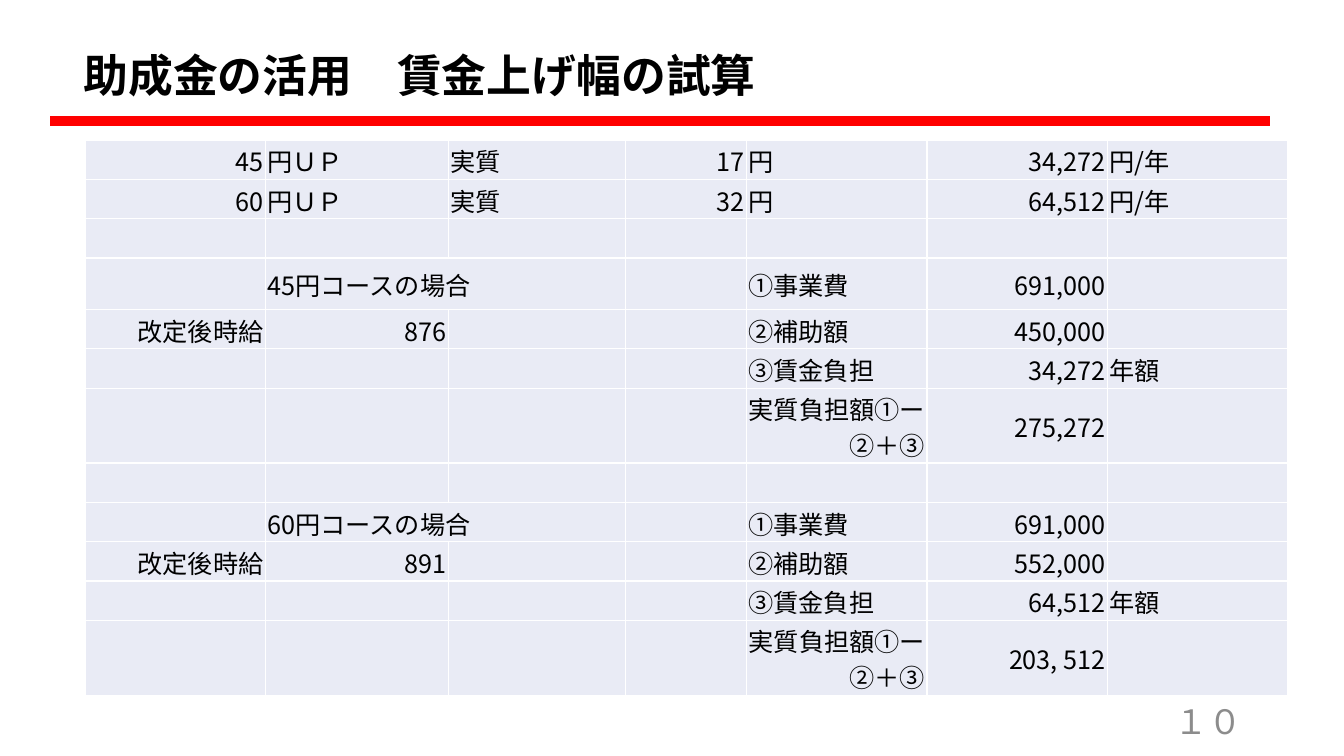
import pptx
import pptx.dml.color
import pptx.enum.shapes
import pptx.enum.text
import pptx.oxml
import pptx.oxml.ns
import pptx.util
import lxml.etree

Cm = pptx.util.Cm
Pt = pptx.util.Pt
ALIGN = pptx.enum.text.PP_ALIGN
ANCHOR = pptx.enum.text.MSO_ANCHOR
FONT = "Noto Sans CJK JP"
qn = pptx.oxml.ns.qn


def rgb(value):
    return pptx.dml.color.RGBColor.from_string(value)


def add_run(p, text, size, color="000000", bold=False):
    r = p.add_run()
    r.text = text
    r.font.size = Pt(size)
    r.font.bold = bold
    r.font.color.rgb = rgb(color)
    r.font.name = FONT
    ea = lxml.etree.SubElement(r.font._element, qn("a:ea"))
    ea.set("typeface", FONT)


prs = pptx.Presentation()
prs.slide_width = Cm(33.87)
prs.slide_height = Cm(19.05)
slide = prs.slides.add_slide(prs.slide_layouts[5])

# Wage trial table
COLS = [4.55, 4.62, 4.45, 3.05, 4.55, 4.55, 4.55]
ROWS = [0.99, 0.99, 0.99, 1.3, 0.99, 0.99, 1.78, 0.99, 0.99, 0.99, 0.99, 1.78]
CELLS = [
    ["45", "円ＵＰ", "実質", "17", "円", "34,272", "円/年"],
    ["60", "円ＵＰ", "実質", "32", "円", "64,512", "円/年"],
    [""] * 7,
    ["", "45円コースの場合", "", "", "①事業費", "691,000", ""],
    ["改定後時給", "876", "", "", "②補助額", "450,000", ""],
    ["", "", "", "", "③賃金負担", "34,272", "年額"],
    ["", "", "", "", "実質負担額①ー②＋③", "275,272", ""],
    [""] * 7,
    ["", "60円コースの場合", "", "", "①事業費", "691,000", ""],
    ["改定後時給", "891", "", "", "②補助額", "552,000", ""],
    ["", "", "", "", "③賃金負担", "64,512", "年額"],
    ["", "", "", "", "実質負担額①ー②＋③", "203, 512", ""],
]
RIGHT_COLS = (0, 3, 5)

frame = slide.shapes.add_table(len(ROWS), len(COLS), Cm(2.14), Cm(3.53),
                               Cm(sum(COLS)), Cm(sum(ROWS)))
table = frame.table
table.first_row = False
table.horz_banding = False
for col, width in zip(table.columns, COLS):
    col.width = Cm(width)
for row, height in zip(table.rows, ROWS):
    row.height = Cm(height)

for i, texts in enumerate(CELLS):
    for j, text in enumerate(texts):
        cell = table.cell(i, j)
        cell.margin_left = cell.margin_right = cell.margin_top = Cm(0.05)
        cell.margin_bottom = 0
        cell.vertical_anchor = ANCHOR.MIDDLE
        tcPr = cell._tc.get_or_add_tcPr()
        for side in ("a:lnL", "a:lnR", "a:lnT", "a:lnB"):
            ln = lxml.etree.SubElement(tcPr, qn(side), w=str(Pt(1)))
            fill = lxml.etree.SubElement(ln, qn("a:solidFill"))
            lxml.etree.SubElement(fill, qn("a:srgbClr"), val="FFFFFF")
        cell.fill.solid()
        cell.fill.fore_color.rgb = rgb("E9EBF5")
        p = cell.text_frame.paragraphs[0]
        if text:
            right = j in RIGHT_COLS or text.isdigit() or text.startswith("実質負担額")
            p.alignment = ALIGN.RIGHT if right else ALIGN.LEFT
            add_run(p, text, 18)
        else:
            p.font.size = Pt(18)
for i in (3, 8):
    table.cell(i, 1).merge(table.cell(i, 2))

# Red rule under the title
rule = slide.shapes.add_connector(pptx.enum.shapes.MSO_CONNECTOR.STRAIGHT,
                                  Cm(1.27), Cm(3.05), Cm(32), Cm(3.05))
rule.line.color.rgb = rgb("FF0000")
rule.line.width = Pt(6.75)
lxml.etree.SubElement(rule._element.spPr, qn("a:effectLst"))

# Title
title = slide.shapes.title
title.left, title.top, title.width, title.height = Cm(1.85), Cm(1.22), Cm(18.9), Cm(1.8)
tf = title.text_frame
tf.auto_size = pptx.enum.text.MSO_AUTO_SIZE.NONE
tf.word_wrap = True
tf.vertical_anchor = ANCHOR.TOP
p = tf.paragraphs[0]
p.alignment = ALIGN.LEFT
p.line_spacing = 0.9
add_run(p, "助成金の活用　賃金上げ幅の試算", 32, bold=True)

# Page number
sp = slide.shapes.add_textbox(Cm(23.93), Cm(17.65), Cm(7.62), Cm(1.02))
tf = sp.text_frame
tf.word_wrap = True
tf.vertical_anchor = ANCHOR.MIDDLE
p = tf.paragraphs[0]
p.alignment = ALIGN.RIGHT
add_run(p, "１０", 24, "8C8C8C")

prs.save("out.pptx")
